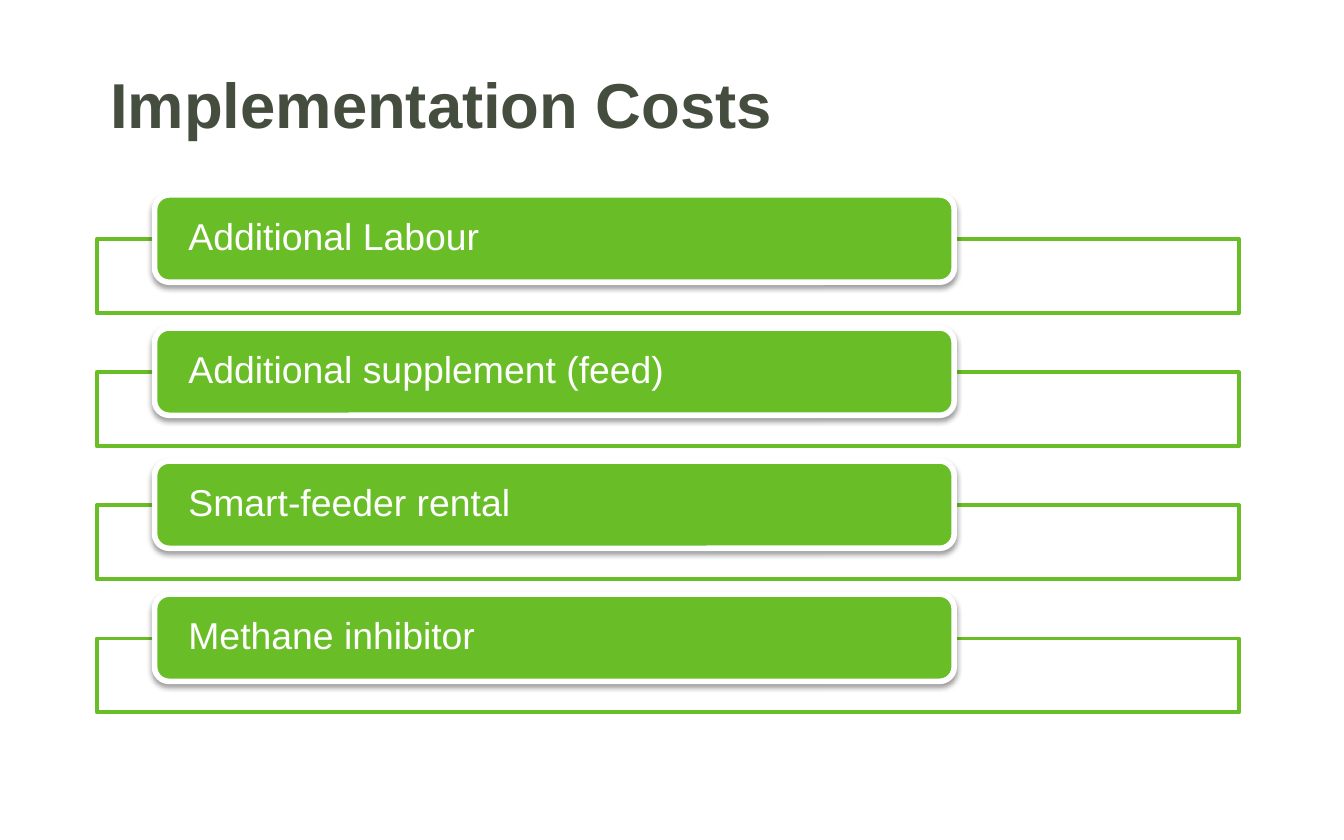
from lxml import etree
from pptx import Presentation
from pptx.dml.color import RGBColor
from pptx.enum.shapes import MSO_SHAPE
from pptx.enum.text import MSO_ANCHOR, PP_ALIGN
from pptx.oxml.ns import qn
from pptx.util import Inches, Pt

RECT = MSO_SHAPE.RECTANGLE
ROUND = MSO_SHAPE.ROUNDED_RECTANGLE
MIDDLE = MSO_ANCHOR.MIDDLE
LEFT = PP_ALIGN.LEFT

GREEN = RGBColor(0x69, 0xBE, 0x28)
WHITE = RGBColor(0xFF, 0xFF, 0xFF)
DARK = RGBColor(0x44, 0x4D, 0x3E)

COSTS = [
    "Additional Labour",
    "Additional supplement (feed)",
    "Smart-feeder rental",
    "Methane inhibitor",
]


def set_text(shape, text, size, color, bold=False):
    frame = shape.text_frame
    frame.word_wrap = True
    frame.vertical_anchor = MIDDLE
    frame.text = text
    para = frame.paragraphs[0]
    para.alignment = LEFT
    para.line_spacing = 0.9
    font = para.runs[0].font
    font.name = "Arial"
    font.size = Pt(size)
    font.bold = bold
    font.color.rgb = color


def add_box(slide, kind, box, fill, line, width):
    shape = slide.shapes.add_shape(kind, *map(Inches, box))
    shape.shadow.inherit = False
    shape.fill.solid()
    shape.fill.fore_color.rgb = fill
    shape.line.color.rgb = line
    shape.line.width = Pt(width)
    return shape


def add_shadow(shape):
    effects = shape._element.spPr.find(qn("a:effectLst"))
    shadow = etree.SubElement(
        effects, qn("a:outerShdw"), blurRad=str(Pt(3.1)), dist=str(Pt(1.6)),
        dir="5400000", rotWithShape="0")
    color = etree.SubElement(shadow, qn("a:srgbClr"), val="000000")
    etree.SubElement(color, qn("a:alpha"), val="38000")


def add_title(slide, box, text):
    title = slide.shapes.title
    title.left, title.top, title.width, title.height = map(Inches, box)
    set_text(title, text, 34, DARK, True)


def add_cost(slide, box, text):
    left, top, width, height = box
    add_box(slide, RECT, (left, top + 0.33, width, height - 0.33),
            WHITE, GREEN, 2)
    label = add_box(slide, ROUND, (left + 0.43, top, width * 0.7, 0.65),
                    GREEN, WHITE, 3)
    add_shadow(label)
    set_text(label, text, 20, WHITE)
    frame = label.text_frame
    frame.margin_left = frame.margin_right = Inches(0.22)
    frame.margin_top = frame.margin_bottom = 0


def add_costs(slide, box, costs):
    left, top, width, height = box
    gap = 0.11
    tall = (height + gap) / len(costs) - gap
    for i, text in enumerate(costs):
        add_cost(slide, (left, top + i * (tall + gap), width, tall), text)


def main():
    deck = Presentation()
    deck.slide_width = Inches(10)
    deck.slide_height = Inches(6.25)
    slide = deck.slides.add_slide(deck.slide_layouts[5])
    add_title(slide, (0.72, 0.49, 8.5, 0.62), "Implementation Costs")
    add_costs(slide, (0.72, 1.45, 8.5, 3.85), COSTS)
    deck.save("out.pptx")


if __name__ == "__main__":
    main()
